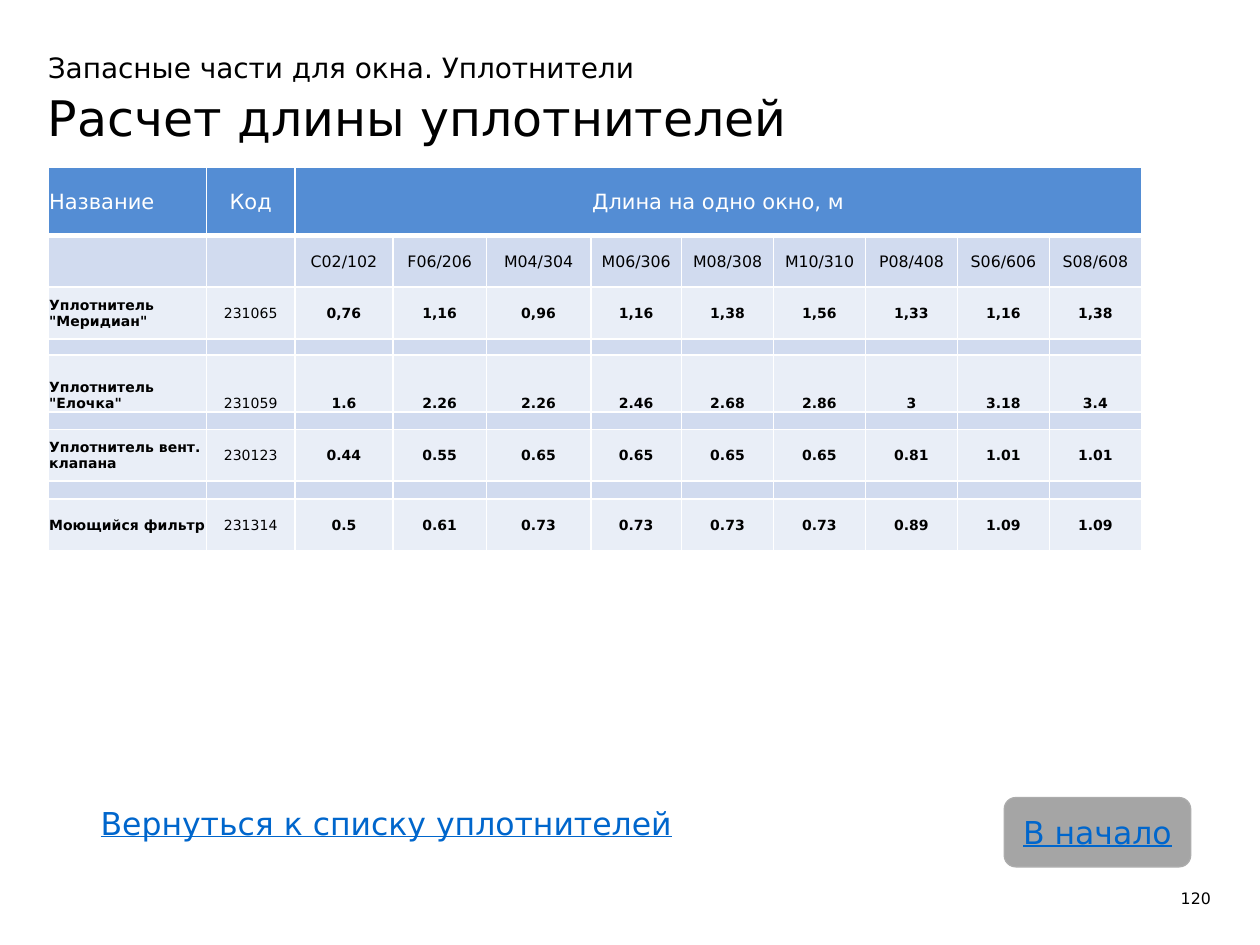
from lxml.etree import SubElement
from pptx import Presentation
from pptx.dml.color import RGBColor
from pptx.enum.shapes import MSO_SHAPE
from pptx.enum.text import MSO_ANCHOR, MSO_AUTO_SIZE, PP_ALIGN
from pptx.oxml import parse_xml
from pptx.oxml.ns import nsdecls, qn
from pptx.util import Inches, Pt

COLORS = {
    "black": "000000", "white": "FFFFFF", "header": "548DD4",
    "band": "D1DBEF", "row": "E9EEF7", "link": "0066CC",
    "button": "A5A5A5", "button_line": "ACACAC",
}
FONT = "DejaVu Sans"
COLUMN_WIDTHS = [1.26, 0.7, 0.78, 0.74, 0.83, 0.72] + [0.73] * 5
ROW_HEIGHTS = [0.54, 0.41, 0.41, 0.13, 0.45, 0.14, 0.41, 0.14, 0.41]
HEADINGS = ["Название", "Код", "Длина на одно окно, м"]
WINDOWS = "C02/102 F06/206 M04/304 M06/306 M08/308 M10/310 P08/408 S06/606 S08/608"
SEALS = [
    ('Уплотнитель "Меридиан"', "231065", "0,76 1,16 0,96 1,16 1,38 1,56 1,33 1,16 1,38"),
    ('Уплотнитель "Елочка"', "231059", "1.6 2.26 2.26 2.46 2.68 2.86 3 3.18 3.4"),
    ("Уплотнитель вент. клапана", "230123", "0.44 0.55 0.65 0.65 0.65 0.65 0.81 1.01 1.01"),
    ("Моющийся фильтр", "231314", "0.5 0.61 0.73 0.73 0.73 0.73 0.89 1.09 1.09"),
]


def rgb(name):
    return RGBColor.from_string(COLORS[name])


class SlideBuilder:
    def __init__(self, deck):
        self.page = deck.slides.add_slide(deck.slide_layouts[5])

    def span(self, para, text, size, color="black", **style):
        span = para.add_run()
        span.text = text
        values = {"name": FONT, "size": Pt(size), **style}
        for key, value in values.items():
            setattr(span.font, key, value)
        span.font.color.rgb = rgb(color)

    def frame(self, frame, margins, anchor=MSO_ANCHOR.TOP, grow=False):
        sides = ("margin_left", "margin_top", "margin_right", "margin_bottom")
        values = {side: Inches(margin) for side, margin in zip(sides, margins)}
        values["word_wrap"] = True
        values["vertical_anchor"] = anchor
        values["auto_size"] = MSO_AUTO_SIZE.SHAPE_TO_FIT_TEXT if grow else MSO_AUTO_SIZE.NONE
        for key, value in values.items():
            setattr(frame, key, value)
        return frame.paragraphs[0]

    def title(self, place, lines):
        box = self.page.shapes.title
        for key, value in zip(("left", "top", "width", "height"), place):
            setattr(box, key, Inches(value))
        para = self.frame(box.text_frame, (0, 0, 0, 0.04), MSO_ANCHOR.BOTTOM)
        para.alignment, para.line_spacing = PP_ALIGN.LEFT, 1.05
        for index, (text, size) in enumerate(lines):
            if index:
                para.add_line_break()
                # The break keeps the size of the line it ends
                line_break = para._p.findall(qn("a:br"))[-1]
                SubElement(line_break, qn("a:rPr"), sz=str(lines[index - 1][1] * 100))
            self.span(para, text, size)

    def text(self, place, text, size, color="black", align=PP_ALIGN.LEFT,
             margins=(0, 0, 0, 0), grow=False, **style):
        box = self.page.shapes.add_textbox(*map(Inches, place))
        para = self.frame(box.text_frame, margins, grow=grow)
        para.alignment = align
        self.span(para, text, size, color, **style)

    def button(self, place, text):
        box = self.page.shapes.add_shape(
            MSO_SHAPE.FLOWCHART_ALTERNATE_PROCESS, *map(Inches, place))
        box.shadow.inherit = False
        box.fill.solid()
        box.fill.fore_color.rgb = rgb("button")
        box.line.color.rgb = rgb("button_line")
        box.line.width = Pt(0.75)
        para = self.frame(box.text_frame, (0, 0, 0, 0), MSO_ANCHOR.MIDDLE)
        para.alignment = PP_ALIGN.CENTER
        self.span(para, text, 18, "link", underline=True)

    def table(self, left, top, widths, heights):
        table = self.page.shapes.add_table(
            len(heights), len(widths), Inches(left), Inches(top),
            Inches(sum(widths)), Inches(sum(heights))).table
        for column, width in zip(table.columns, widths):
            column.width = Inches(width)
        for row, height in zip(table.rows, heights):
            row.height = Inches(height)
        return table

    def cell(self, cell, text, fill, size, color="black", align=PP_ALIGN.CENTER,
             anchor=MSO_ANCHOR.MIDDLE, top=1, bottom=1, **style):
        values = {"vertical_anchor": anchor, "margin_bottom": 0}
        values.update({f"margin_{side}": Inches(0.01) for side in ("left", "top", "right")})
        for key, value in values.items():
            setattr(cell, key, value)
        cell.fill.solid()
        cell.fill.fore_color.rgb = rgb(fill)
        borders = {"lnL": 1, "lnR": 1, "lnT": top, "lnB": bottom}
        for index, (tag, width) in enumerate(borders.items()):
            cell._tc.tcPr.insert(index, parse_xml(
                f'<a:{tag} {nsdecls("a")} w="{Pt(width)}"><a:solidFill>'
                f'<a:srgbClr val="{COLORS["white"]}"/></a:solidFill></a:{tag}>'))
        para = cell.text_frame.paragraphs[0]
        para.alignment = align
        if text:
            self.span(para, text, size, color, **style)
        else:
            SubElement(para._p, qn("a:endParaRPr"), sz=str(size * 100))


def fill_table(builder):
    table = builder.table(0.38, 1.33, COLUMN_WIDTHS, ROW_HEIGHTS)
    count = len(COLUMN_WIDTHS)

    # Header rows
    table.cell(0, 2).merge(table.cell(0, count - 1))
    for column, text in enumerate(HEADINGS + [""] * (count - len(HEADINGS))):
        align = PP_ALIGN.CENTER if column else PP_ALIGN.LEFT
        builder.cell(table.cell(0, column), text, "header", 12, "white", align, bottom=3)
    for column, text in enumerate(["", ""] + WINDOWS.split()):
        builder.cell(table.cell(1, column), text, "band", 9, top=3)

    # Seal rows with a narrow band between them
    for index, (name, code, lengths) in enumerate(SEALS):
        row = 2 + 2 * index
        anchor = MSO_ANCHOR.BOTTOM if index == 1 else MSO_ANCHOR.MIDDLE
        for column, text in enumerate([name, code] + lengths.split()):
            align = PP_ALIGN.CENTER if column else PP_ALIGN.LEFT
            builder.cell(table.cell(row, column), text, "row", 8, align=align,
                         anchor=anchor, bold=column != 1)
            if index < len(SEALS) - 1:
                builder.cell(table.cell(row + 1, column), "", "band", 7)


def main():
    deck = Presentation()
    deck.slide_width, deck.slide_height = Inches(10), Inches(7.5)
    builder = SlideBuilder(deck)

    builder.title((0.38, 0.18, 7.69, 1.02), [
        ("Запасные части для окна. Уплотнители", 16),
        ("Расчет длины уплотнителей", 28),
    ])
    fill_table(builder)

    # Slide number and navigation
    builder.text((9.28, 7.05, 0.33, 0.24), "120", 9, align=PP_ALIGN.RIGHT)
    builder.button((7.97, 6.33, 1.48, 0.55), "В начало")
    builder.text((0.7, 6.33, 5.55, 0.4), "Вернуться к списку уплотнителей", 18, "link",
                 margins=(0.1, 0.05, 0.1, 0.05), grow=True, underline=True)
    deck.save("out.pptx")


if __name__ == "__main__":
    main()
